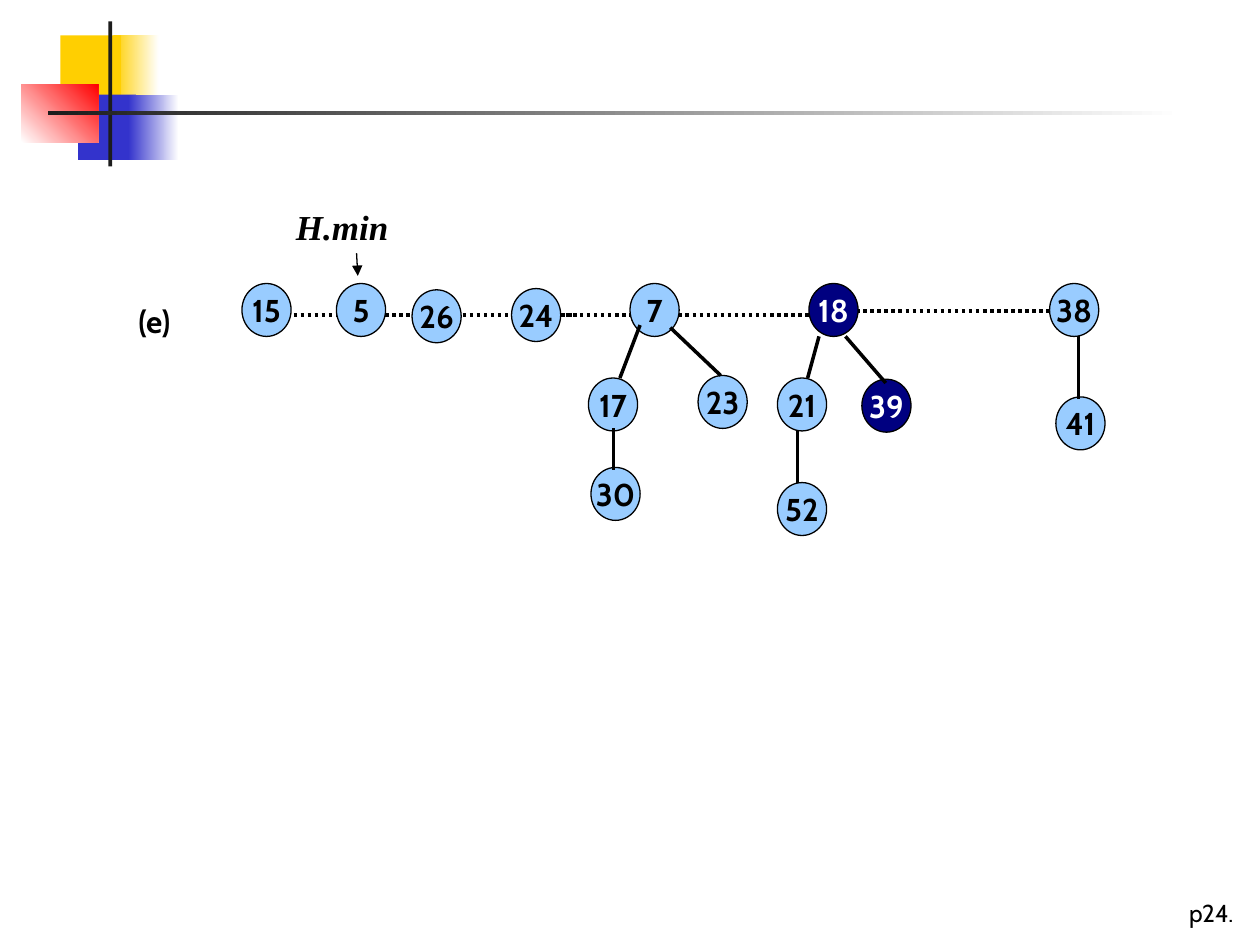
from typing import NamedTuple, Optional

from lxml.etree import SubElement
from pptx import Presentation
from pptx.dml.color import RGBColor
from pptx.enum.dml import MSO_LINE
from pptx.enum.shapes import MSO_CONNECTOR, MSO_SHAPE
from pptx.enum.text import MSO_ANCHOR, MSO_AUTO_SIZE, PP_ALIGN
from pptx.oxml.ns import qn
from pptx.util import Inches, Pt

FONT = "Cabin"
BLACK, WHITE = "000000", "FFFFFF"
YELLOW, BLUE, RED, DARK = "FFCF01", "3333CC", "FF0000", "1C1C1C"
LIGHT_NODE, MARKED_NODE = "99CCFF", "000080"
NODE_WIDTH, NODE_HEIGHT = 0.39, 0.42
ROOT_TOP, CHILD_TOP = 2.25, 3.0


class Block(NamedTuple):
    left: float
    top: float
    width: float
    height: float
    color: str
    end_color: Optional[str] = None
    angle: float = 0


class Node(NamedTuple):
    key: int
    left: float
    top: float
    marked: bool = False


class Line(NamedTuple):
    x1: float
    y1: float
    x2: float
    y2: float


class Label(NamedTuple):
    text: str
    left: float
    top: float
    width: float
    height: float
    size: int
    font: str = FONT
    bold: bool = True
    italic: bool = False


BLOCKS = [
    Block(0.9, 0.28, 0.36, 0.52, YELLOW, WHITE),
    Block(0.48, 0.28, 0.48, 0.52, YELLOW),
    Block(0.62, 0.75, 0.46, 0.52, BLUE),
    Block(1.02, 0.75, 0.4, 0.52, BLUE, WHITE),
    Block(0.17, 0.67, 0.61, 0.46, WHITE, RED, 45),
    Block(0.86, 0.17, 0.03, 1.15, DARK),
    Block(0.38, 0.88, 9, 0.03, DARK, WHITE),
]

ROOT_LINKS = [
    Line(2.33, 2.5, 4.58, 2.5),
    Line(4.49, 2.5, 6.49, 2.5),
    Line(6.46, 2.47, 8.33, 2.47),
]

NODES = [
    Node(15, 1.92, ROOT_TOP),
    Node(5, 2.67, ROOT_TOP),
    Node(26, 3.27, 2.3),
    Node(24, 4.06, 2.29),
    Node(7, 5, ROOT_TOP),
    Node(18, 6.42, ROOT_TOP, marked=True),
    Node(38, 8.33, ROOT_TOP),
    Node(17, 4.67, CHILD_TOP),
    Node(23, 5.54, 2.98),
    Node(21, 6.17, CHILD_TOP),
    Node(39, 6.84, 3.01, marked=True),
    Node(41, 8.38, 3.15),
    Node(30, 4.69, 3.71),
    Node(52, 6.17, 3.83),
]

CHILD_LINKS = [
    Line(5.08, 2.58, 4.92, 3),
    Line(5.32, 2.6, 5.72, 2.98),
    Line(4.87, 3.4, 4.87, 3.73),
    Line(6.5, 2.67, 6.41, 3),
    Line(6.71, 2.67, 7.03, 3.04),
    Line(6.33, 3.42, 6.33, 3.83),
    Line(8.56, 2.67, 8.56, 3.17),
]

MIN_POINTER = Line(2.83, 2.01, 2.84, 2.19)

LABELS = [
    Label("p24.", 9.34, 7.08, 0.66, 0.33, 14, bold=False),
    Label("(e)", 1, 2.35, 0.58, 0.4, 18),
    Label("H.min", 2.25, 1.58, 1, 0.43, 20, "Times New Roman", italic=True),
]


def rgb(color: str) -> RGBColor:
    return RGBColor.from_string(color)


def style_text(paragraph, size: int, color: str, font: str = FONT,
               bold: bool = True, italic: bool = False) -> None:
    paragraph.font.name = font
    paragraph.font.size = Pt(size)
    paragraph.font.bold = bold
    paragraph.font.italic = italic
    paragraph.font.color.rgb = rgb(color)


def draw_block(slide, block: Block) -> None:
    """Draw a borderless rectangle, fading to end_color if one is given."""
    shape = slide.shapes.add_shape(
        MSO_SHAPE.RECTANGLE, Inches(block.left), Inches(block.top),
        Inches(block.width), Inches(block.height))
    shape.shadow.inherit = False
    shape.line.fill.background()
    if block.end_color is None:
        shape.fill.solid()
        shape.fill.fore_color.rgb = rgb(block.color)
        return
    shape.fill.gradient()
    shape.fill.gradient_angle = block.angle
    for stop, color in zip(shape.fill.gradient_stops,
                           (block.color, block.end_color)):
        stop.color.rgb = rgb(color)


def draw_node(slide, node: Node) -> None:
    shape = slide.shapes.add_shape(
        MSO_SHAPE.OVAL, Inches(node.left), Inches(node.top),
        Inches(NODE_WIDTH), Inches(NODE_HEIGHT))
    shape.shadow.inherit = False
    shape.fill.solid()
    shape.fill.fore_color.rgb = rgb(MARKED_NODE if node.marked else LIGHT_NODE)
    shape.line.color.rgb = rgb(BLACK)
    shape.line.width = Pt(0.75)
    frame = shape.text_frame
    frame.word_wrap = False
    frame.vertical_anchor = MSO_ANCHOR.MIDDLE
    paragraph = frame.paragraphs[0]
    paragraph.text = str(node.key)
    paragraph.alignment = PP_ALIGN.CENTER
    style_text(paragraph, 18, WHITE if node.marked else BLACK)


def draw_line(slide, line: Line, width: float = 2, dotted: bool = False,
              arrow: bool = False) -> None:
    connector = slide.shapes.add_connector(
        MSO_CONNECTOR.STRAIGHT, Inches(line.x1), Inches(line.y1),
        Inches(line.x2), Inches(line.y2))
    connector.line.color.rgb = rgb(BLACK)
    connector.line.width = Pt(width)
    if dotted:
        connector.line.dash_style = MSO_LINE.ROUND_DOT  # written as sysDot
    if arrow:
        SubElement(connector.line._get_or_add_ln(), qn("a:tailEnd"), type="triangle")
    SubElement(connector._element.spPr, qn("a:effectLst"))


def draw_label(slide, label: Label) -> None:
    box = slide.shapes.add_textbox(
        Inches(label.left), Inches(label.top),
        Inches(label.width), Inches(label.height))
    frame = box.text_frame
    frame.word_wrap = False
    frame.auto_size = MSO_AUTO_SIZE.SHAPE_TO_FIT_TEXT
    paragraph = frame.paragraphs[0]
    paragraph.text = label.text
    style_text(paragraph, label.size, BLACK, label.font, label.bold, label.italic)


def main() -> None:
    presentation = Presentation()
    presentation.slide_width = Inches(10)
    presentation.slide_height = Inches(7.5)
    slide = presentation.slides.add_slide(presentation.slide_layouts[6])
    for block in BLOCKS:
        draw_block(slide, block)
    for link in ROOT_LINKS:
        draw_line(slide, link, dotted=True)
    for node in NODES:
        draw_node(slide, node)
    for link in CHILD_LINKS:
        draw_line(slide, link)
    draw_line(slide, MIN_POINTER, width=0.75, arrow=True)
    for label in LABELS:
        draw_label(slide, label)
    presentation.save("out.pptx")


if __name__ == "__main__":
    main()
